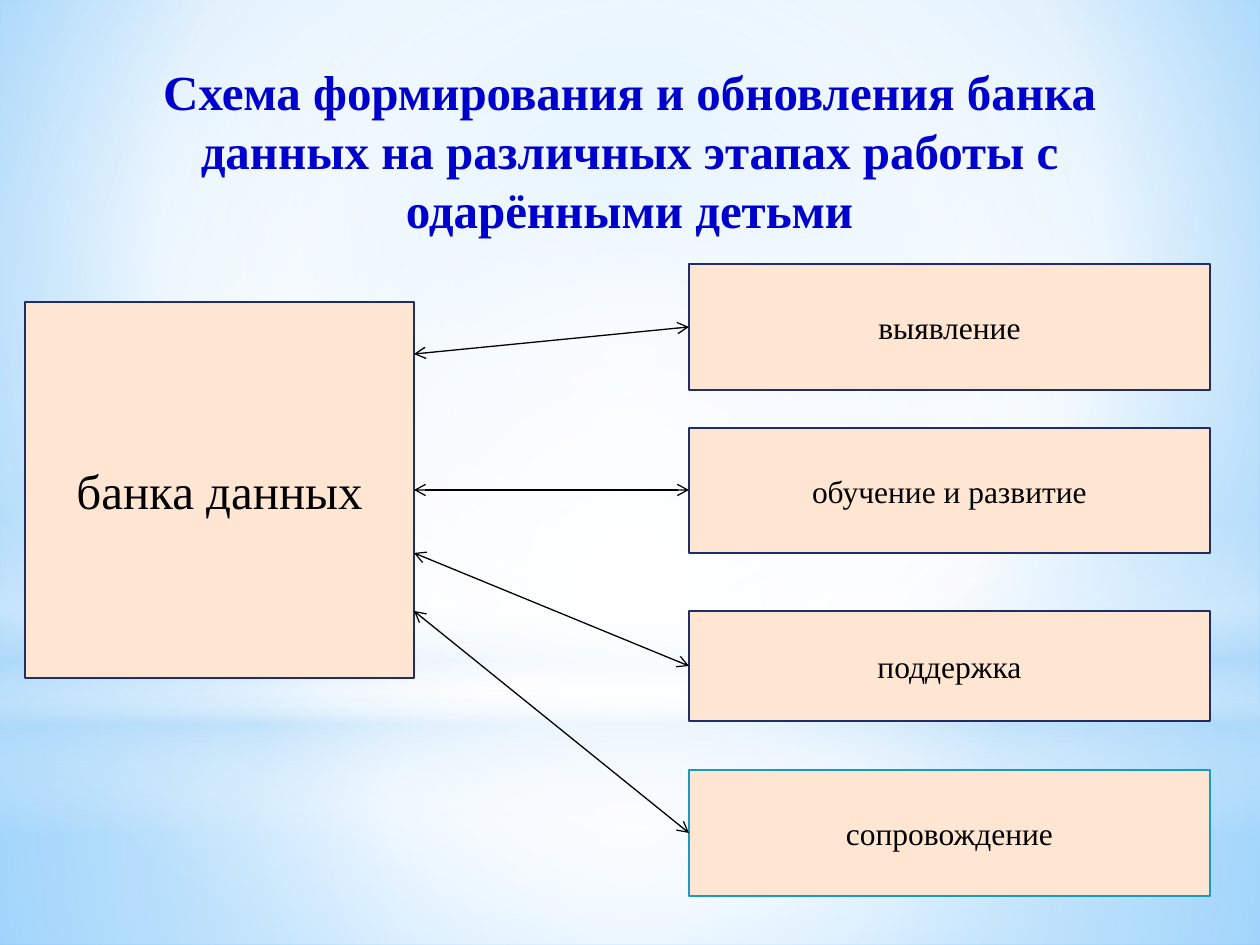
from dataclasses import dataclass

from lxml.etree import SubElement
from pptx import Presentation
from pptx.dml.color import RGBColor
from pptx.enum.shapes import MSO_CONNECTOR, MSO_SHAPE
from pptx.enum.text import MSO_ANCHOR, MSO_AUTO_SIZE, PP_ALIGN
from pptx.oxml.ns import qn
from pptx.util import Pt

EMU_PER_PX = 914400 / 126
CENTER = (50, 50, 50, 50)


def px(length):
    return round(length * EMU_PER_PX)


@dataclass(frozen=True)
class Theme:
    font: str = "Times New Roman"
    title: str = "0000CC"
    text: str = "000000"
    box: str = "FFE6D3"
    navy: str = "1F2E69"
    teal: str = "1999C6"
    white: str = "FFFFFF"
    haze: str = "B4DCFA"
    sky: str = "9ED5FF"
    deep_sky: str = "5BB9FF"
    large: int = 28
    small: int = 18
    outline: float = 1.25
    arrow: float = 0.75


class SlideBuilder:
    def __init__(self, page, theme):
        self.page = page
        self.theme = theme

    def gradient(self, fill, owner, stops, focus=None):
        fill.gradient()
        gradient = owner.find(".//" + qn("a:gradFill"))
        for child in list(gradient):
            gradient.remove(child)
        stop_list = SubElement(gradient, qn("a:gsLst"))
        for position, color, opacity in stops:
            stop = SubElement(stop_list, qn("a:gs"), pos=str(position * 1000))
            tint = SubElement(stop, qn("a:srgbClr"), val=color)
            if opacity < 100:
                SubElement(tint, qn("a:alpha"), val=str(opacity * 1000))
        if focus:
            shade = SubElement(gradient, qn("a:path"), path="circle")
            sides = {side: str(share * 1000) for side, share in zip("ltrb", focus)}
            SubElement(shade, qn("a:fillToRect"), **sides)
        else:
            SubElement(gradient, qn("a:lin"), ang="5400000", scaled="0")

    def background(self, stops, focus):
        self.gradient(self.page.background.fill, self.page.element, stops, focus)

    def shape(self, kind, left, top, width, height):
        shape = self.page.shapes.add_shape(
            kind, px(left), px(top), px(width), px(height))
        shape.shadow.inherit = False
        return shape

    def glow(self, kind, top, height, stops, focus=None):
        shape = self.shape(kind, 0, top, 1260, height)
        shape.line.fill.background()
        self.gradient(shape.fill, shape.element, stops, focus)

    def label(self, shape, text, size, color, bold=False):
        frame = shape.text_frame
        frame.text = text
        frame.word_wrap = True
        frame.vertical_anchor = MSO_ANCHOR.MIDDLE
        para = frame.paragraphs[0]
        para.alignment = PP_ALIGN.CENTER
        font = para.runs[0].font
        font.name = self.theme.font
        font.size = Pt(size)
        font.bold = bold
        font.color.rgb = RGBColor.from_string(color)

    def title(self, text, left, top, width, height):
        title = self.page.shapes.title
        title.left, title.top = px(left), px(top)
        title.width, title.height = px(width), px(height)
        self.label(title, text, self.theme.large, self.theme.title, bold=True)
        title.text_frame.auto_size = MSO_AUTO_SIZE.SHAPE_TO_FIT_TEXT
        title.element.getparent().append(title.element)

    def box(self, text, left, top, width, height, size, outline):
        box = self.shape(MSO_SHAPE.RECTANGLE, left, top, width, height)
        box.fill.solid()
        box.fill.fore_color.rgb = RGBColor.from_string(self.theme.box)
        box.line.color.rgb = RGBColor.from_string(outline)
        box.line.width = Pt(self.theme.outline)
        self.label(box, text, size, self.theme.text)

    def double_arrow(self, start_x, start_y, end_x, end_y):
        arrow = self.page.shapes.add_connector(
            MSO_CONNECTOR.STRAIGHT, px(start_x), px(start_y), px(end_x), px(end_y))
        arrow.line.color.rgb = RGBColor.from_string(self.theme.text)
        arrow.line.width = Pt(self.theme.arrow)
        properties = arrow.element.spPr
        outline = properties.find(qn("a:ln"))
        for end in ("a:headEnd", "a:tailEnd"):
            SubElement(outline, qn(end), type="arrow")
        SubElement(properties, qn("a:effectLst"))


def main():
    theme = Theme()
    white, haze = theme.white, theme.haze
    deck = Presentation()
    deck.slide_width, deck.slide_height = px(1260), px(945)
    slide = SlideBuilder(deck.slides.add_slide(deck.slide_layouts[5]), theme)

    slide.background(
        [(0, theme.sky, 100), (60, white, 100), (100, theme.deep_sky, 100)],
        (20, 10, 20, 60))
    slide.glow(MSO_SHAPE.RECTANGLE, 703, 242,
               [(0, white, 91), (37, white, 76), (100, haze, 79)], CENTER)
    slide.glow(MSO_SHAPE.RECTANGLE, 0, 703,
               [(0, white, 89), (48, white, 62), (100, haze, 79)], CENTER)
    slide.glow(MSO_SHAPE.RECTANGLE, 519, 315,
               [(0, white, 0), (29, white, 30), (45, haze, 40),
                (55, white, 26), (65, haze, 60), (100, white, 0)])
    slide.glow(MSO_SHAPE.OVAL, 220, 703,
               [(0, white, 100), (56, white, 0)], CENTER)

    slide.title("Схема формирования и обновления банка данных на различных "
                "этапах работы с одарёнными детьми", 74, 55, 1111, 190)

    bank_left, bank_width = 25, 389
    bank_right = bank_left + bank_width
    slide.box("банка данных", bank_left, 302, bank_width, 376,
              theme.large, theme.navy)

    stage_left, stage_width = 689, 521
    stages = [
        ("выявление", 264, 126, theme.navy, 354),
        ("обучение и развитие", 428, 125, theme.navy, 490),
        ("поддержка", 611, 110, theme.navy, 553),
        ("сопровождение", 770, 126, theme.teal, 611),
    ]
    for text, top, height, outline, bank_y in stages:
        slide.box(text, stage_left, top, stage_width, height, theme.small, outline)
        slide.double_arrow(stage_left, top + height // 2, bank_right, bank_y)

    deck.save("out.pptx")


if __name__ == "__main__":
    main()
